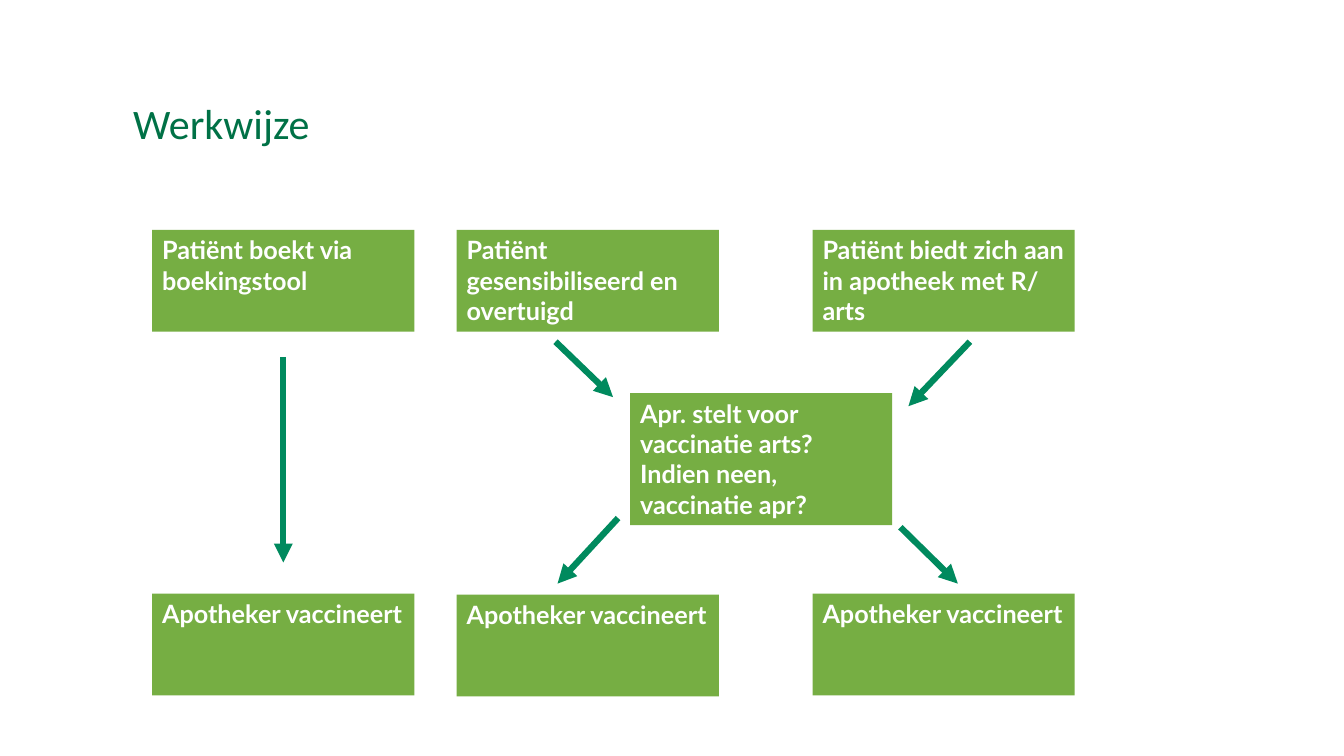
from lxml.etree import SubElement
from pptx import Presentation
from pptx.dml.color import RGBColor
from pptx.enum.shapes import MSO_CONNECTOR, MSO_SHAPE
from pptx.enum.text import MSO_ANCHOR, MSO_AUTO_SIZE, PP_ALIGN
from pptx.oxml.ns import qn
from pptx.util import Inches, Pt

TITLE_GREEN = "007146"
BOX_GREEN = "76AE43"
ARROW_GREEN = "008A5E"
WHITE = "FFFFFF"

TITLE_FONT = {"name": "Calibri", "size": Pt(30), "bold": False}
STEP_FONT = {"name": "Lato", "size": Pt(18), "bold": True}

STEP_WIDTH, STEP_HEIGHT = 2.6, 1.01
BOOKING, CONVINCED, PRESCRIPTION = 1.51, 4.53, 8.06
START_ROW, END_ROW = 2.28, 5.89
VACCINATES = ["Apotheker vaccineert"]

# Left, top, height, paragraphs
STEPS = [
    (BOOKING, START_ROW, STEP_HEIGHT, ["Patiënt boekt via boekingstool"]),
    (CONVINCED, START_ROW, STEP_HEIGHT, ["Patiënt gesensibiliseerd en overtuigd"]),
    (PRESCRIPTION, START_ROW, STEP_HEIGHT,
     ["Patiënt biedt zich aan in apotheek met R/ arts"]),
    (BOOKING, END_ROW, STEP_HEIGHT, VACCINATES),
    (CONVINCED, END_ROW + 0.01, STEP_HEIGHT, VACCINATES),
    (6.25, 3.9, 1.31,
     ["Apr. stelt voor vaccinatie arts?", "Indien neen, vaccinatie apr?"]),
    (PRESCRIPTION, END_ROW, STEP_HEIGHT, VACCINATES),
]

# Start x, start y, end x, end y
ARROWS = [
    (2.81, 3.54, 2.81, 5.58),
    (6.13, 5.14, 5.53, 5.79),
    (5.51, 3.39, 6.08, 3.94),
    (9.62, 3.39, 9.01, 4.03),
    (8.93, 5.23, 9.5, 5.79),
]


def paint(color_format, color):
    color_format.rgb = RGBColor.from_string(color)


def format_font(font, values, color):
    for key, value in values.items():
        setattr(font, key, value)
    paint(font.color, color)


def add_title(slide, text):
    title = slide.shapes.title
    place = {"left": 1.22, "top": 0.6, "width": 11.12, "height": 1.29}
    for key, value in place.items():
        setattr(title, key, Inches(value))
    title.text_frame.text = text
    title.text_frame.vertical_anchor = MSO_ANCHOR.MIDDLE
    heading = title.text_frame.paragraphs[0]
    heading.alignment = PP_ALIGN.LEFT
    heading.line_spacing = 0.9
    format_font(heading.runs[0].font, TITLE_FONT, TITLE_GREEN)


def add_step(slide, left, top, height, lines):
    step = slide.shapes.add_shape(
        MSO_SHAPE.RECTANGLE, Inches(left), Inches(top),
        Inches(STEP_WIDTH), Inches(height))
    step.shadow.inherit = False
    step.fill.solid()
    paint(step.fill.fore_color, BOX_GREEN)
    step.line.fill.background()
    frame = step.text_frame
    frame.text = "\n".join(lines)
    frame.word_wrap = True
    frame.auto_size = MSO_AUTO_SIZE.SHAPE_TO_FIT_TEXT
    frame.vertical_anchor = MSO_ANCHOR.TOP
    for paragraph in frame.paragraphs:
        paragraph.alignment = PP_ALIGN.LEFT
        format_font(paragraph.runs[0].font, STEP_FONT, WHITE)


def add_arrow(slide, *ends):
    arrow = slide.shapes.add_connector(
        MSO_CONNECTOR.STRAIGHT, *(Inches(end) for end in ends))
    arrow.line.width = Pt(4.5)
    paint(arrow.line.color, ARROW_GREEN)
    # Arrowhead at the end, no shadow
    SubElement(arrow.line._get_or_add_ln(), qn("a:tailEnd"), type="triangle")
    SubElement(arrow._element.spPr, qn("a:effectLst"))


def main():
    deck = Presentation()
    deck.slide_width, deck.slide_height = Inches(13.33), Inches(7.5)
    slide = deck.slides.add_slide(deck.slide_layouts[5])

    add_title(slide, "Werkwijze")

    # Flow chart
    for step in STEPS:
        add_step(slide, *step)
    for arrow in ARROWS:
        add_arrow(slide, *arrow)

    deck.save("out.pptx")


if __name__ == "__main__":
    main()
